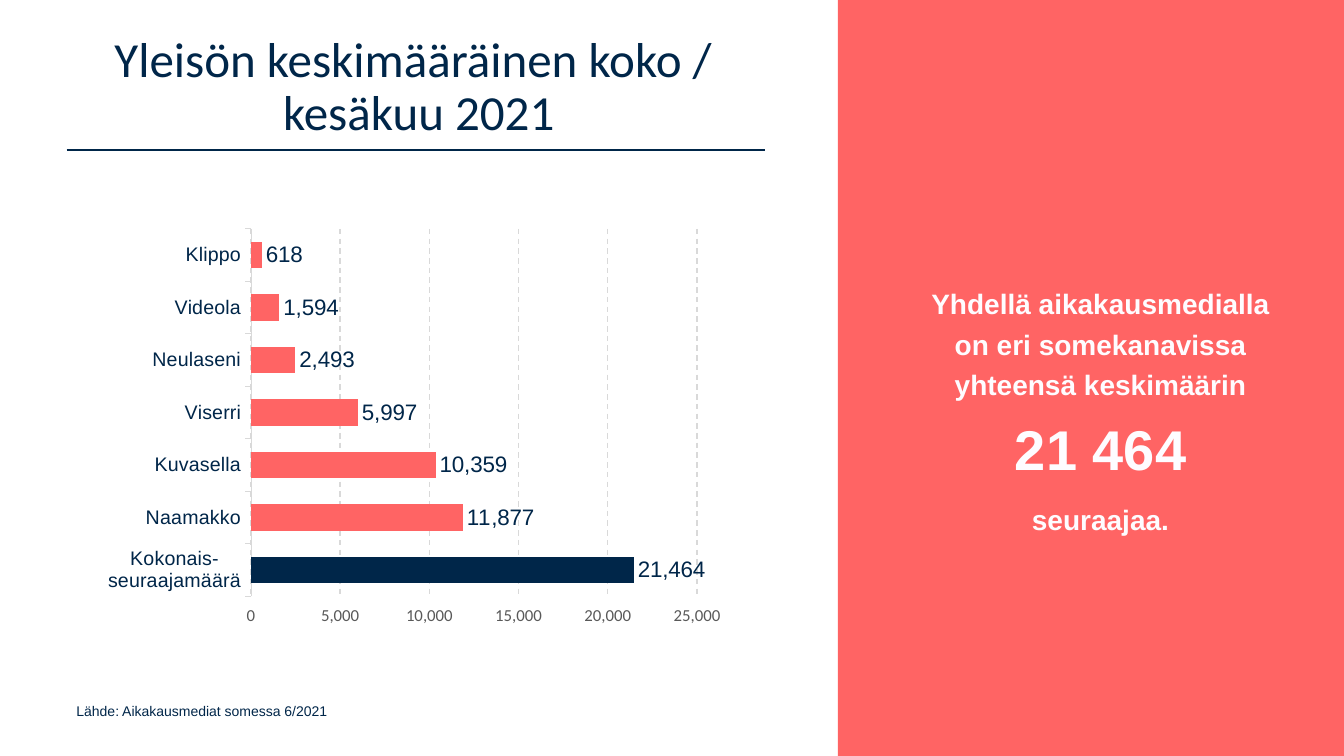
from lxml.etree import SubElement
from pptx import Presentation
from pptx.chart.data import CategoryChartData
from pptx.dml.color import RGBColor
from pptx.enum.chart import XL_CHART_TYPE, XL_LABEL_POSITION, XL_TICK_MARK
from pptx.enum.dml import MSO_LINE
from pptx.enum.shapes import MSO_CONNECTOR, MSO_SHAPE
from pptx.enum.text import MSO_ANCHOR, PP_ALIGN
from pptx.oxml import parse_xml
from pptx.oxml.ns import nsdecls, qn
from pptx.util import Inches, Pt

NAVY = RGBColor(0x00, 0x26, 0x49)
CORAL = RGBColor(0xFF, 0x64, 0x64)
PALE = RGBColor(0xFE, 0xFC, 0xFF)
GREY = RGBColor(0xD9, 0xD9, 0xD9)
DARK = RGBColor(0x59, 0x59, 0x59)
BLACK = RGBColor(0, 0, 0)

FANS = {
    "Kokonais-\nseuraajamäärä": 21464,
    "Naamakko": 11877,
    "Kuvasella": 10359,
    "Viserri": 5997,
    "Neulaseni": 2493,
    "Videola": 1594,
    "Klippo": 618,
}


def style(font, size, color, name="Arial", bold=False):
    """Set the look of a font."""
    font.size, font.name, font.bold = Pt(size), name, bold
    font.color.rgb = color


def add_text(slide, box, paras, color=NAVY, font="Arial", bold=False,
             align=PP_ALIGN.LEFT, anchor=MSO_ANCHOR.TOP, space=1.0, gap=0):
    """Add a text box from paragraphs, each a list of (text, size) runs."""
    frame = slide.shapes.add_textbox(*map(Inches, box)).text_frame
    frame.word_wrap = True
    frame.vertical_anchor = anchor
    for i, runs in enumerate(paras):
        para = frame.add_paragraph() if i else frame.paragraphs[0]
        para.alignment, para.line_spacing = align, space
        para.space_before = Pt(gap if i else 0)
        for j, (text, size) in enumerate(runs):
            if j:
                para.add_line_break()
            run = para.add_run()
            run.text = text
            style(run.font, size, color, font, bold)


def add_panel(slide, box):
    """Add the plain coral side panel."""
    panel = slide.shapes.add_shape(MSO_SHAPE.RECTANGLE, *map(Inches, box))
    panel.shadow.inherit = False
    panel.fill.solid()
    panel.fill.fore_color.rgb = CORAL
    panel.line.fill.background()


def add_rule(slide, left, right, top):
    """Add the thin line below the title."""
    ends = map(Inches, (left, top, right, top))
    rule = slide.shapes.add_connector(MSO_CONNECTOR.STRAIGHT, *ends)
    rule.line.color.rgb = NAVY
    rule.line.width = Pt(1)
    SubElement(rule._element.spPr, qn("a:effectLst"))


def place_plot(chart, x, y, w, h):
    """Fix the inner plot area as fractions of the chart."""
    area = chart._chartSpace.chart.plotArea
    for old in area.findall(qn("c:layout")):
        area.remove(old)
    sizes = "".join(f'<c:{tag} val="{val}"/>' for tag, val in
                    zip("xywh", (x, y, w, h)))
    area.insert(0, parse_xml(
        f'<c:layout {nsdecls("c")}><c:manualLayout>'
        '<c:layoutTarget val="inner"/><c:xMode val="edge"/>'
        f'<c:yMode val="edge"/>{sizes}</c:manualLayout></c:layout>'))


def style_axes(chart):
    """Format both axes and the grid."""
    cat, val = chart.category_axis, chart.value_axis
    cat.major_tick_mark = val.major_tick_mark = XL_TICK_MARK.OUTSIDE
    style(cat.tick_labels.font, 14, NAVY)
    cat.format.line.color.rgb = GREY
    cat.format.line.width = Pt(0.75)
    style(val.tick_labels.font, 12, DARK, "Calibri")
    val.tick_labels.number_format = "#,##0"
    val.tick_labels.number_format_is_linked = False
    val.minimum_scale, val.maximum_scale, val.major_unit = 0, 25000, 5000
    val.format.line.fill.background()
    grid = val.major_gridlines.format.line
    grid.color.rgb = GREY
    grid.width = Pt(1)
    grid.dash_style = MSO_LINE.DASH


def add_bars(slide, box):
    """Add the bar chart of followers."""
    data = CategoryChartData(number_format="#,##0")
    data.categories = list(FANS)
    data.add_series("Series 1", list(FANS.values()))
    chart = slide.shapes.add_chart(
        XL_CHART_TYPE.BAR_CLUSTERED, *map(Inches, box), data).chart
    chart.has_legend = chart.has_title = False
    style(chart.font, 10, BLACK, "Calibri")
    style_axes(chart)
    plot = chart.plots[0]
    plot.vary_by_categories = False
    plot.gap_width = 100
    bars = plot.series[0]
    total = bars.points[0]
    for part, color in ((bars, CORAL), (total, NAVY)):
        part.format.fill.solid()
        part.format.fill.fore_color.rgb = color
    labels = bars.data_labels
    labels.show_value = True
    labels.position = XL_LABEL_POSITION.OUTSIDE_END
    labels.number_format = "#,##0"
    labels.number_format_is_linked = False
    style(labels.font, 16, NAVY)
    place_plot(chart, 0.25, 0.09, 0.57, 0.84)


def main():
    """Build the slide and save it."""
    deck = Presentation()
    deck.slide_width, deck.slide_height = Inches(13.33), Inches(7.5)
    slide = deck.slides.add_slide(deck.slide_layouts[6])
    add_panel(slide, (8.31, 0, 5.02, 7.5))
    add_rule(slide, 0.66, 7.59, 1.49)
    add_text(slide, (0.66, 6.92, 6.58, 0.44),
             [[("Lähde: Aikakausmediat somessa 6/2021", 10)]])
    add_text(slide, (0, 0.25, 8.31, 1.25),
             [[("Yleisön keskimääräinen koko / ", 35), ("kesäkuu 2021", 35)]],
             font="Calibri", align=PP_ALIGN.CENTER,
             anchor=MSO_ANCHOR.MIDDLE, space=0.9)
    add_text(slide, (9.04, 1.5, 3.75, 5.1),
             [[("Yhdellä aikakausmedialla on eri somekanavissa "
                "yhteensä keskimäärin", 20), ("21 464", 40)],
              [("seuraajaa.", 20)]],
             color=PALE, bold=True, align=PP_ALIGN.CENTER,
             anchor=MSO_ANCHOR.MIDDLE, space=1.2, gap=10)
    add_bars(slide, (0.55, 1.88, 7.76, 4.34))
    deck.save("out.pptx")


if __name__ == "__main__":
    main()
